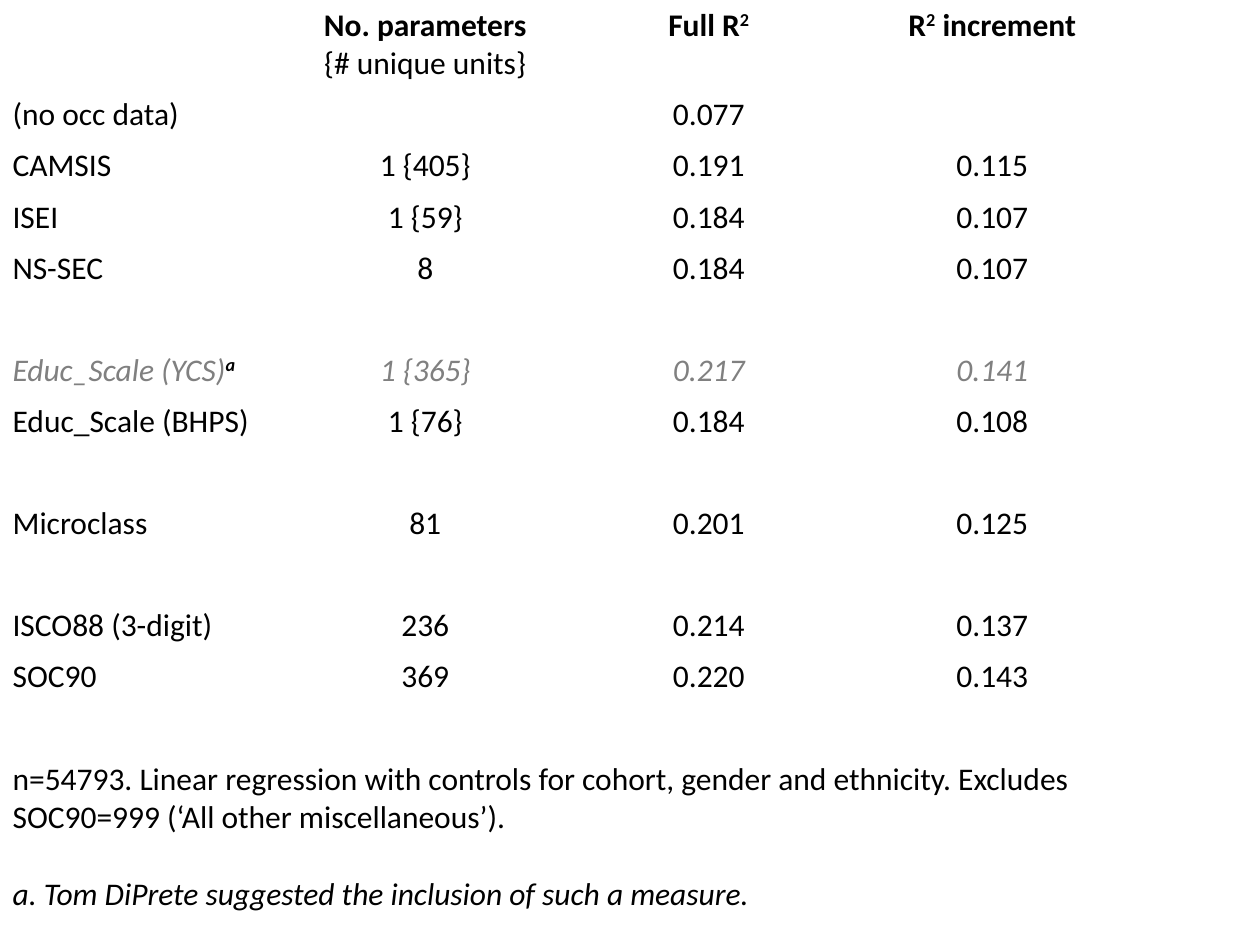
from dataclasses import dataclass

from pptx import Presentation
from pptx.dml.color import RGBColor
from pptx.enum.text import PP_ALIGN as Align
from pptx.util import Pt


@dataclass(frozen=True)
class Theme:
    font: str = "Calibri"
    size: float = 18
    line: float = 22
    row: float = 29.2
    column: float = 162
    ink: RGBColor = RGBColor(0x00, 0x00, 0x00)
    muted: RGBColor = RGBColor(0x80, 0x80, 0x80)
    paper: RGBColor = RGBColor(0xFF, 0xFF, 0xFF)


@dataclass(frozen=True)
class Span:
    """A stretch of text that shares one look."""
    text: str
    bold: bool = False
    italic: bool = False
    muted: bool = False
    raised: bool = False


HEADER = [
    [],
    [[Span("No. parameters", bold=True)], [Span("{# unique units}")]],
    [[Span("Full R", bold=True), Span("2", bold=True, raised=True)]],
    [[Span("R", bold=True), Span("2", bold=True, raised=True),
      Span(" increment", bold=True)]],
]
BLANK = ("", "", "", "")
MEASURES = [
    ("(no occ data)", "", "0.077", ""),
    ("CAMSIS", "1 {405}", "0.191", "0.115"),
    ("ISEI", "1 {59}", "0.184", "0.107"),
    ("NS-SEC", "8", "0.184", "0.107"),
    BLANK,
    ("Educ_Scale (YCS)", "1 {365}", "0.217", "0.141"),
    ("Educ_Scale (BHPS)", "1 {76}", "0.184", "0.108"),
    BLANK,
    ("Microclass", "81", "0.201", "0.125"),
    BLANK,
    ("ISCO88 (3-digit)", "236", "0.214", "0.137"),
    ("SOC90", "369", "0.220", "0.143"),
    BLANK,
]
MUTED_MEASURE = "Educ_Scale (YCS)"
NOTES = [
    [Span("n=54793. Linear regression with controls for cohort, gender and "
          "ethnicity. Excludes SOC90=999 (‘All other miscellaneous’).")],
    [Span("a. Tom DiPrete suggested the inclusion of such a measure.", italic=True)],
]


class SlideBuilder:
    def __init__(self, slide, theme):
        self.slide = slide
        self.theme = theme

    def background(self):
        fill = self.slide.background.fill
        fill.solid()
        fill.fore_color.rgb = self.theme.paper

    def table(self, row_heights, column_count):
        theme = self.theme
        frame = self.slide.shapes.add_table(
            len(row_heights), column_count, Pt(0), Pt(0),
            Pt(theme.column * column_count), Pt(sum(row_heights)))
        table = frame.table
        table.first_row = table.horz_banding = False
        for row, height in zip(table.rows, row_heights):
            row.height = Pt(height)
        for cell in table.iter_cells():
            cell.fill.background()
        return table

    def cell(self, cell, paragraphs, align=Align.LEFT, gap=0):
        """Fill a cell with lists of spans, one list a paragraph."""
        frame = cell.text_frame
        frame.text = "\n".join("" for _ in paragraphs)
        for index, (paragraph, spans) in enumerate(zip(frame.paragraphs, paragraphs)):
            paragraph.alignment = align
            if index and gap:
                paragraph.space_before = Pt(gap)
            for span in spans:
                self.run(paragraph, span)

    def run(self, paragraph, span):
        run = paragraph.add_run()
        run.text = span.text
        font = run.font
        font.name, font.size = self.theme.font, Pt(self.theme.size)
        font.bold, font.italic = span.bold, span.italic
        font.color.rgb = self.theme.muted if span.muted else self.theme.ink
        if span.raised:
            run._r.get_or_add_rPr().set("baseline", "30000")


def measure_cells(measure):
    muted = measure[0] == MUTED_MEASURE
    cells = [[[Span(text, italic=muted, muted=muted)]] if text else []
             for text in measure]
    if muted:
        cells[0][0].append(Span("a", bold=True, italic=True, raised=True))
    return cells


def main():
    theme = Theme()
    deck = Presentation()
    deck.slide_width, deck.slide_height = Pt(720), Pt(540)
    builder = SlideBuilder(deck.slides.add_slide(deck.slide_layouts[6]), theme)
    builder.background()

    rows = [HEADER] + [measure_cells(measure) for measure in MEASURES]
    heights = ([theme.row + theme.line] + [theme.row] * len(MEASURES)
               + [theme.row + 3 * theme.line])
    table = builder.table(heights, len(HEADER))
    for row_index, row in enumerate(rows):
        for column, paragraphs in enumerate(row):
            builder.cell(table.cell(row_index, column), paragraphs,
                         Align.CENTER if column else Align.LEFT)

    notes = table.cell(len(rows), 0)
    notes.merge(table.cell(len(rows), len(HEADER) - 1))
    builder.cell(notes, NOTES, gap=theme.line)
    deck.save("out.pptx")


if __name__ == "__main__":
    main()
